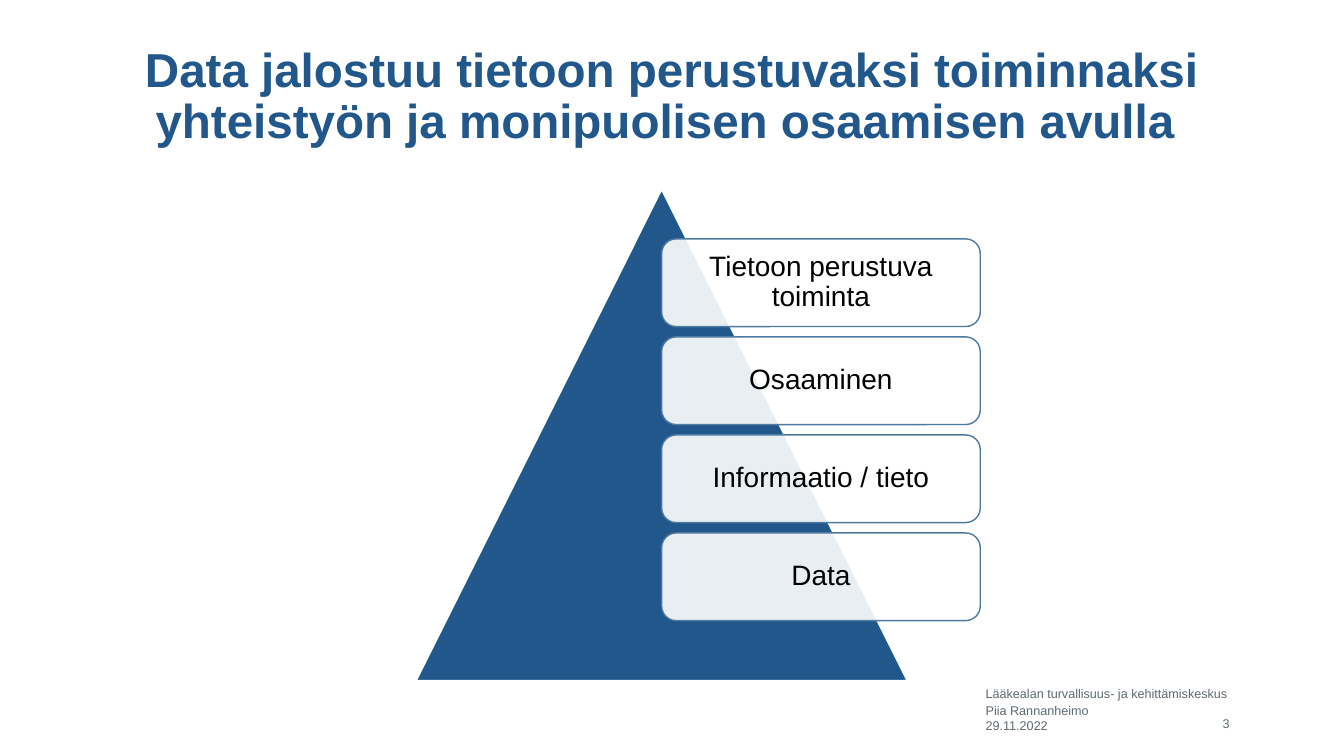
from dataclasses import dataclass

from lxml import etree
from pptx import Presentation
from pptx.dml.color import RGBColor
from pptx.enum.shapes import MSO_SHAPE
from pptx.enum.text import MSO_ANCHOR, PP_ALIGN
from pptx.oxml.ns import qn
from pptx.util import Cm, Pt

TRIANGLE, ROUNDED = MSO_SHAPE.ISOSCELES_TRIANGLE, MSO_SHAPE.ROUNDED_RECTANGLE
TOP, MIDDLE = MSO_ANCHOR.TOP, MSO_ANCHOR.MIDDLE
LEFT, CENTER, RIGHT = PP_ALIGN.LEFT, PP_ALIGN.CENTER, PP_ALIGN.RIGHT

# The trailing space counts in the centring of the second line.
TITLE = "Data jalostuu tietoon perustuvaksi toiminnaksi yhteistyön ja monipuolisen osaamisen avulla "
LEVELS = ["Tietoon perustuva toiminta", "Osaaminen", "Informaatio / tieto", "Data"]
# text, (left, top, width, height) in cm, anchor, alignment
FOOTER = [
    ("Lääkealan turvallisuus- ja kehittämiskeskus", (24.59, 17.17, 6.75, 0.64), TOP, LEFT),
    ("Piia Rannanheimo", (24.59, 17.55, 5.36, 0.71), MIDDLE, LEFT),
    ("29.11.2022", (24.59, 17.91, 2.49, 0.74), MIDDLE, LEFT),
    ("3", (30.07, 17.88, 1.17, 0.71), MIDDLE, RIGHT),
]

TITLE_BOX = (2.33, 1.17, 29.21, 2.57)
PYRAMID_LEFT, PYRAMID_TOP, PYRAMID_SIZE = 10.49, 4.78, 12.37
LEVEL_TOP, LEVEL_WIDTH, LEVEL_HEIGHT, LEVEL_GAP = 6.02, 8.03, 2.21, 0.26
LEVEL_INSET = 0.3


@dataclass(frozen=True)
class Theme:
    font: str = "Arial"
    blue: RGBColor = RGBColor(0x21, 0x57, 0x8A)
    outline: RGBColor = RGBColor(0x4E, 0x79, 0xA1)
    white: RGBColor = RGBColor(0xFF, 0xFF, 0xFF)
    black: RGBColor = RGBColor(0, 0, 0)
    gray: RGBColor = RGBColor(0x5E, 0x6A, 0x71)
    title_size: int = 34
    level_size: int = 20
    footer_size: int = 9


THEME = Theme()


def cm_box(box):
    return [Cm(value) for value in box]


def write(tf, text, size, color, align=LEFT, anchor=MIDDLE, spacing=1.0, bold=False):
    tf.word_wrap = True
    tf.vertical_anchor = anchor
    p = tf.paragraphs[0]
    p.alignment, p.line_spacing = align, spacing
    r = p.add_run()
    r.text = text
    font = {"name": THEME.font, "size": Pt(size), "bold": bold}
    for name, value in font.items():
        setattr(r.font, name, value)
    r.font.color.rgb = color


def add_panel(s, kind, box, fill, line):
    sp = s.shapes.add_shape(kind, *cm_box(box))
    sp.shadow.inherit = False
    sp.fill.solid()
    sp.fill.fore_color.rgb = fill
    sp.line.color.rgb = line
    sp.line.width = Pt(1)
    return sp


def set_opacity(sp, percent):
    color = sp.fill._xPr.find(qn("a:solidFill"))[0]
    etree.SubElement(color, qn("a:alpha")).set("val", str(percent * 1000))


def add_title(s):
    title = s.shapes.title
    title.left, title.top, title.width, title.height = cm_box(TITLE_BOX)
    write(title.text_frame, TITLE, THEME.title_size, THEME.blue, CENTER,
          spacing=0.9, bold=True)


def add_pyramid(s):
    add_panel(s, TRIANGLE, (PYRAMID_LEFT, PYRAMID_TOP, PYRAMID_SIZE, PYRAMID_SIZE),
              THEME.blue, THEME.white)
    axis = PYRAMID_LEFT + PYRAMID_SIZE / 2
    for i, level in enumerate(LEVELS):
        top = LEVEL_TOP + i * (LEVEL_HEIGHT + LEVEL_GAP)
        sp = add_panel(s, ROUNDED, (axis, top, LEVEL_WIDTH, LEVEL_HEIGHT),
                       THEME.white, THEME.outline)
        set_opacity(sp, 90)
        tf = sp.text_frame
        for side in ("left", "top", "right", "bottom"):
            setattr(tf, f"margin_{side}", Cm(LEVEL_INSET))
        write(tf, level, THEME.level_size, THEME.black, CENTER, spacing=0.9)


def add_footer(s):
    for text, box, anchor, align in FOOTER:
        tf = s.shapes.add_textbox(*cm_box(box)).text_frame
        write(tf, text, THEME.footer_size, THEME.gray, align, anchor)


def main():
    prs = Presentation()
    prs.slide_width, prs.slide_height = Cm(33.87), Cm(19.05)
    s = prs.slides.add_slide(prs.slide_layouts.get_by_name("Title Only"))
    add_title(s)
    add_pyramid(s)
    add_footer(s)
    prs.save("out.pptx")


if __name__ == "__main__":
    main()
